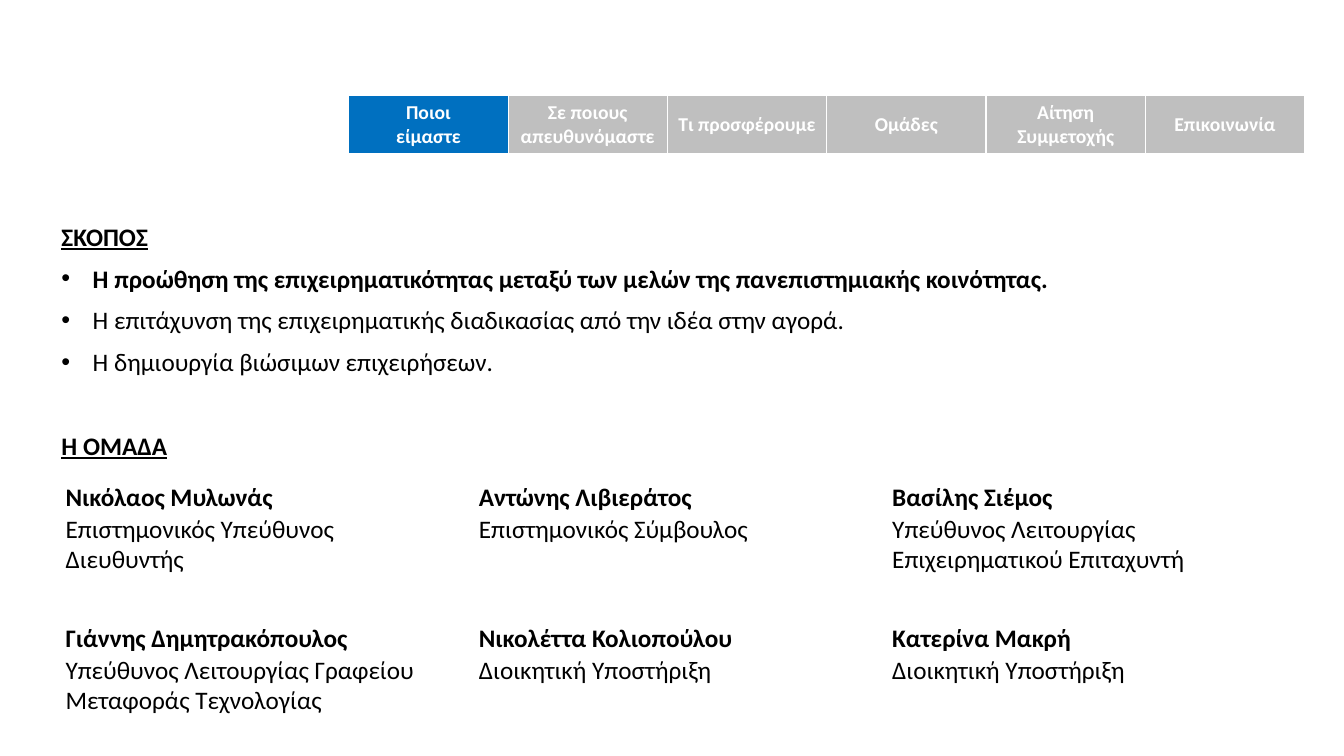
from lxml import etree
from pptx import Presentation
from pptx.dml.color import RGBColor
from pptx.enum.text import MSO_ANCHOR, MSO_AUTO_SIZE, PP_ALIGN
from pptx.oxml.ns import qn
from pptx.util import Inches, Pt

BLUE = RGBColor(0x00, 0x70, 0xC0)
GREY = RGBColor(0xBF, 0xBF, 0xBF)
WHITE = RGBColor(0xFF, 0xFF, 0xFF)
BLACK = RGBColor(0x00, 0x00, 0x00)


def style(font, size, color, bold=False, line=False):
    look = {"name": "Calibri", "size": Pt(size), "bold": bold, "underline": line}
    for key, value in look.items():
        setattr(font, key, value)
    font.color.rgb = color


def add_grid(slide, heights, widths, left, top):
    """Add a table with the given row heights and column widths in inches."""
    frame = slide.shapes.add_table(
        len(heights), len(widths), Inches(left), Inches(top),
        Inches(sum(widths)), Inches(sum(heights)))
    table = frame.table
    table.horz_banding = False
    for row, height in zip(table.rows, heights):
        row.height = Inches(height)
    for col, width in zip(table.columns, widths):
        col.width = Inches(width)
    return table


prs = Presentation()
prs.slide_width, prs.slide_height = Inches(13.33), Inches(7.5)
slide = prs.slides.add_slide(prs.slide_layouts[1])
title = slide.shapes.title
title.element.getparent().remove(title.element)

# Navigation bar
tabs = ["Ποιοι\nείμαστε", "Σε ποιους απευθυνόμαστε", "Τι προσφέρουμε",
        "Ομάδες", "Αίτηση Συμμετοχής", "Επικοινωνία"]
nav = add_grid(slide, [0.57], [1.58] * len(tabs), 3.46, 0.95)
for i, (cell, label) in enumerate(zip(nav.iter_cells(), tabs)):
    cell.text = label
    cell.vertical_anchor = MSO_ANCHOR.MIDDLE
    cell.fill.solid()
    cell.fill.fore_color.rgb = GREY if i else BLUE
    for para in cell.text_frame.paragraphs:
        para.alignment = PP_ALIGN.CENTER
        style(para.runs[0].font, 14, WHITE, bold=True)

# Purpose: text, heading, bold, space before
goals = [
    ("ΣΚΟΠΟΣ", True, True, 0),
    ("Η προώθηση της επιχειρηματικότητας μεταξύ των μελών της "
     "πανεπιστημιακής κοινότητας.", False, True, 0),
    ("Η επιτάχυνση της επιχειρηματικής διαδικασίας από την ιδέα στην αγορά.",
     False, False, 0),
    ("Η δημιουργία βιώσιμων επιχειρήσεων.", False, False, 0),
    ("Η ΟΜΑΔΑ", True, True, 30),
]
body = slide.placeholders[1]
body.left, body.top = Inches(0.51), Inches(2.1)
body.width, body.height = Inches(12.42), Inches(2.52)
frame = body.text_frame
frame.auto_size = MSO_AUTO_SIZE.NONE
frame.vertical_anchor = MSO_ANCHOR.TOP
frame.text = "\n".join(goal[0] for goal in goals)
for para, (_, head, bold, gap) in zip(frame.paragraphs, goals):
    para.alignment = PP_ALIGN.JUSTIFY
    para.line_spacing = 1.15
    para.space_before, para.space_after = Pt(gap), Pt(5)
    props = para._p.get_or_add_pPr()
    indent = 0 if head else Inches(0.31)
    props.set("marL", str(indent))
    props.set("indent", str(-indent))
    if head:
        etree.SubElement(props, qn("a:buNone"))
    else:
        etree.SubElement(props, qn("a:buFont")).set("typeface", "Arial")
        etree.SubElement(props, qn("a:buChar")).set("char", "•")
    style(para.runs[0].font, 18, BLACK, bold, head)

# Team: rows of names and roles
team = [
    ["Νικόλαος Μυλωνάς", "Αντώνης Λιβιεράτος", "Βασίλης Σιέμος"],
    ["Επιστημονικός Υπεύθυνος\nΔιευθυντής", "Επιστημονικός Σύμβουλος",
     "Υπεύθυνος Λειτουργίας\nΕπιχειρηματικού Επιταχυντή"],
    ["", "", ""],
    ["Γιάννης Δημητρακόπουλος", "Νικολέττα Κολιοπούλου", "Κατερίνα Μακρή"],
    ["Υπεύθυνος Λειτουργίας Γραφείου\nΜεταφοράς Τεχνολογίας",
     "Διοικητική Υποστήριξη", "Διοικητική Υποστήριξη"],
]
grid = add_grid(slide, [0.39, 0.61, 0.39, 0.39, 0.67], [4.1] * 3, 0.64, 4.7)
grid.first_row = False
for r, row in enumerate(team):
    name = r in (0, 3)
    for c, words in enumerate(row):
        cell = grid.cell(r, c)
        cell.text = words
        cell.fill.background()
        cell.vertical_anchor = MSO_ANCHOR.BOTTOM if name else MSO_ANCHOR.TOP
        cell.margin_left = cell.margin_right = cell.margin_top = Inches(0.01)
        cell.margin_bottom = 0
        for para in cell.text_frame.paragraphs:
            for run in para.runs:
                style(run.font, 18, BLACK, bold=name)

prs.save("out.pptx")
